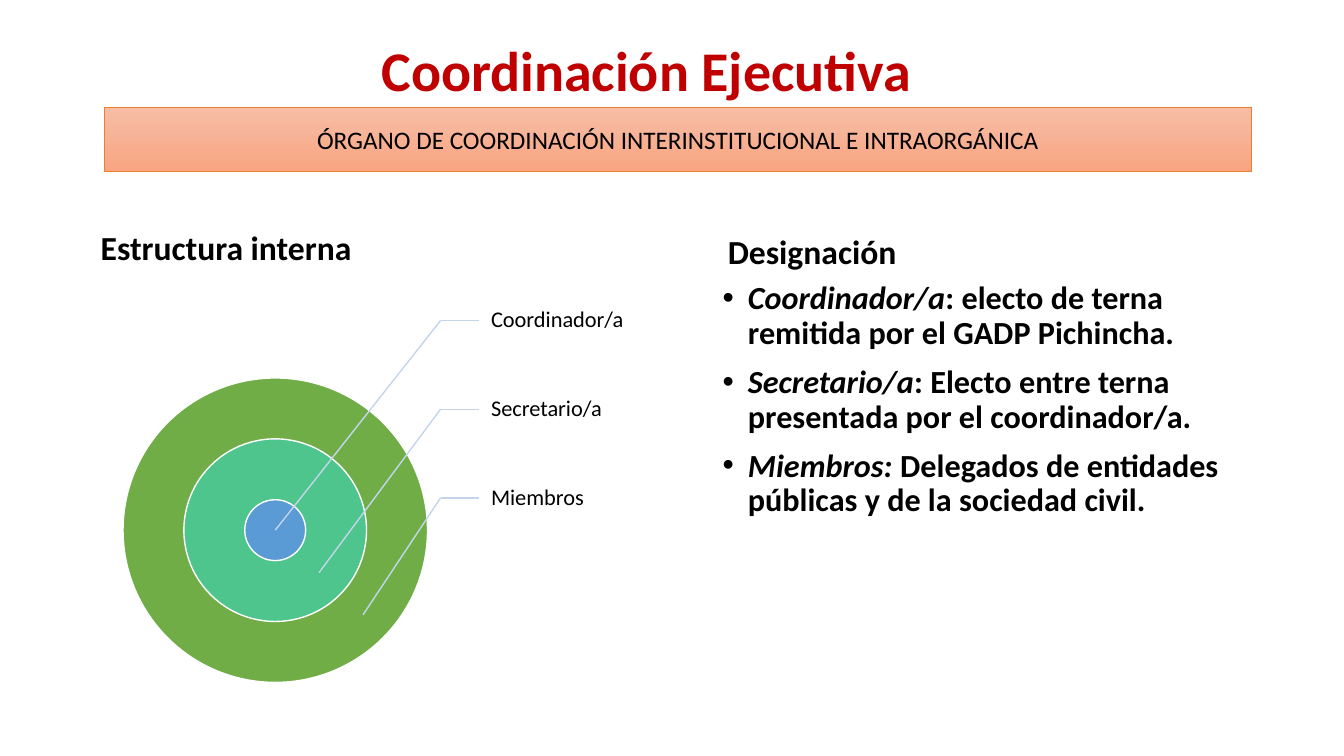
from lxml import etree
from pptx import Presentation
from pptx.dml.color import RGBColor
from pptx.enum.shapes import MSO_CONNECTOR, MSO_SHAPE
from pptx.enum.text import MSO_ANCHOR, PP_ALIGN
from pptx.oxml.ns import qn
from pptx.util import Inches, Pt

LINE = MSO_CONNECTOR.STRAIGHT
OVAL, RECT = MSO_SHAPE.OVAL, MSO_SHAPE.RECTANGLE
TOP, MID, LOW = MSO_ANCHOR.TOP, MSO_ANCHOR.MIDDLE, MSO_ANCHOR.BOTTOM
LEFT, MIDDLE = PP_ALIGN.LEFT, PP_ALIGN.CENTER

RED = RGBColor(0xC0, 0x00, 0x00)
BLACK = RGBColor(0x00, 0x00, 0x00)
WHITE = RGBColor(0xFF, 0xFF, 0xFF)
GREEN = RGBColor(0x70, 0xAD, 0x47)
TEAL = RGBColor(0x4D, 0xC5, 0x8D)
BLUE = RGBColor(0x5B, 0x9B, 0xD5)
PALE = RGBColor(0xC4, 0xD5, 0xEB)
ORANGE = RGBColor(0xED, 0x7D, 0x31)
PEACH = RGBColor(0xF7, 0xBD, 0xA5)
CORAL = RGBColor(0xF8, 0xA5, 0x82)

FONT = "Calibri"
WIDE, HIGH = 13.33, 7.5
TITLE = "Coordinación Ejecutiva"
BANNER = "ÓRGANO DE COORDINACIÓN INTERINSTITUCIONAL E INTRAORGÁNICA"
HEADS = [
    ("Estructura interna", (0.9, 2.15, 5.64, 0.56)),
    ("Designación", (7.12, 2.19, 5.67, 0.56)),
]
ROLES = [
    ("Coordinador/a", ": electo de terna remitida por el GADP Pichincha."),
    ("Secretario/a", ": Electo entre terna presentada por el coordinador/a."),
    ("Miembros:", " Delegados de entidades públicas y de la sociedad civil."),
]
RINGS = [(GREEN, 5), (TEAL, 3), (BLUE, 1)]
LABELS = ["Coordinador/a", "Secretario/a", "Miembros"]
HUB = (2.73, 5.26)
UNIT = 0.302
ROW = 0.88
FIRST = 2.74
BEND, EDGE = 4.37, 4.75
STEP = (0.435, 0.42)


def add_run(para, text, size, color=BLACK, bold=False, slant=False):
    run = para.add_run()
    run.text = text
    font = run.font
    font.name, font.size = FONT, Pt(size)
    font.bold, font.italic = bold, slant
    font.color.rgb = color


def add_box(slide, area, anchor, inset=(0.1, 0.05, 0.1, 0.05)):
    frame = slide.shapes.add_textbox(*map(Inches, area)).text_frame
    frame.word_wrap = True
    frame.vertical_anchor = anchor
    (frame.margin_left, frame.margin_top,
     frame.margin_right, frame.margin_bottom) = map(Inches, inset)
    return frame


def add_line(slide, start, end):
    line = slide.shapes.add_connector(LINE, *map(Inches, start + end))
    line.line.color.rgb = PALE
    line.line.width = Pt(1)
    etree.SubElement(line._element.spPr, qn("a:effectLst"))


def add_text(slide, text, area, anchor, size, color=BLACK, bold=True,
             align=LEFT, inset=(0.1, 0.05, 0.1, 0.05)):
    para = add_box(slide, area, anchor, inset).paragraphs[0]
    para.alignment = align
    para.line_spacing = 0.9
    add_run(para, text, size, color, bold)


def add_roles(slide):
    frame = add_box(slide, (7.07, 2.75, 5.34, 3.24), TOP)
    for i, (role, duty) in enumerate(ROLES):
        para = frame.add_paragraph() if i else frame.paragraphs[0]
        props = para._p.get_or_add_pPr()
        props.set("marL", str(Inches(0.25)))
        props.set("indent", str(-Inches(0.25)))
        etree.SubElement(props, qn("a:buFont")).set("typeface", "Arial")
        etree.SubElement(props, qn("a:buChar")).set("char", "•")
        para.line_spacing = 0.9
        if i:
            para.space_before = Pt(10)
        add_run(para, role, 23, bold=True, slant=True)
        add_run(para, duty, 23, bold=True)


def add_target(slide):
    for color, size in RINGS:
        half = size * UNIT
        area = (HUB[0] - half, HUB[1] - half, 2 * half, 2 * half)
        ring = slide.shapes.add_shape(OVAL, *map(Inches, area))
        ring.shadow.inherit = False
        ring.fill.solid()
        ring.fill.fore_color.rgb = color
        ring.line.color.rgb = WHITE
        ring.line.width = Pt(1)
    for i, label in enumerate(LABELS):
        top = FIRST + i * ROW
        bend = (BEND, top + ROW / 2)
        add_text(slide, label, (EDGE, top, 1.51, ROW), MID, 16,
                 bold=False, inset=(0.12, 0.02, 0.02, 0.02))
        add_line(slide, bend, (EDGE, bend[1]))
        add_line(slide, bend, (HUB[0] + i * STEP[0], HUB[1] + i * STEP[1]))


def add_banner(slide):
    area = (1.04, 1.07, 11.37, 0.63)
    bar = slide.shapes.add_shape(RECT, *map(Inches, area))
    bar.shadow.inherit = False
    bar.fill.gradient()
    bar.fill.gradient_angle = 270
    for stop, color, place in zip(bar.fill.gradient_stops, (PEACH, CORAL), (0, 1)):
        stop.color.rgb = color
        stop.position = place
    bar.line.color.rgb = ORANGE
    bar.line.width = Pt(0.5)
    bar.text_frame.vertical_anchor = MID
    para = bar.text_frame.paragraphs[0]
    para.alignment = MIDDLE
    add_run(para, BANNER, 18)


def main():
    deck = Presentation()
    deck.slide_width, deck.slide_height = Inches(WIDE), Inches(HIGH)
    slide = deck.slides.add_slide(deck.slide_layouts[6])
    add_text(slide, TITLE, (0.66, 0.38, 11.5, 0.69), MID, 40, RED, align=MIDDLE)
    for head, area in HEADS:
        add_text(slide, head, area, LOW, 24)
    add_roles(slide)
    add_target(slide)
    add_banner(slide)
    deck.save("out.pptx")


if __name__ == "__main__":
    main()
